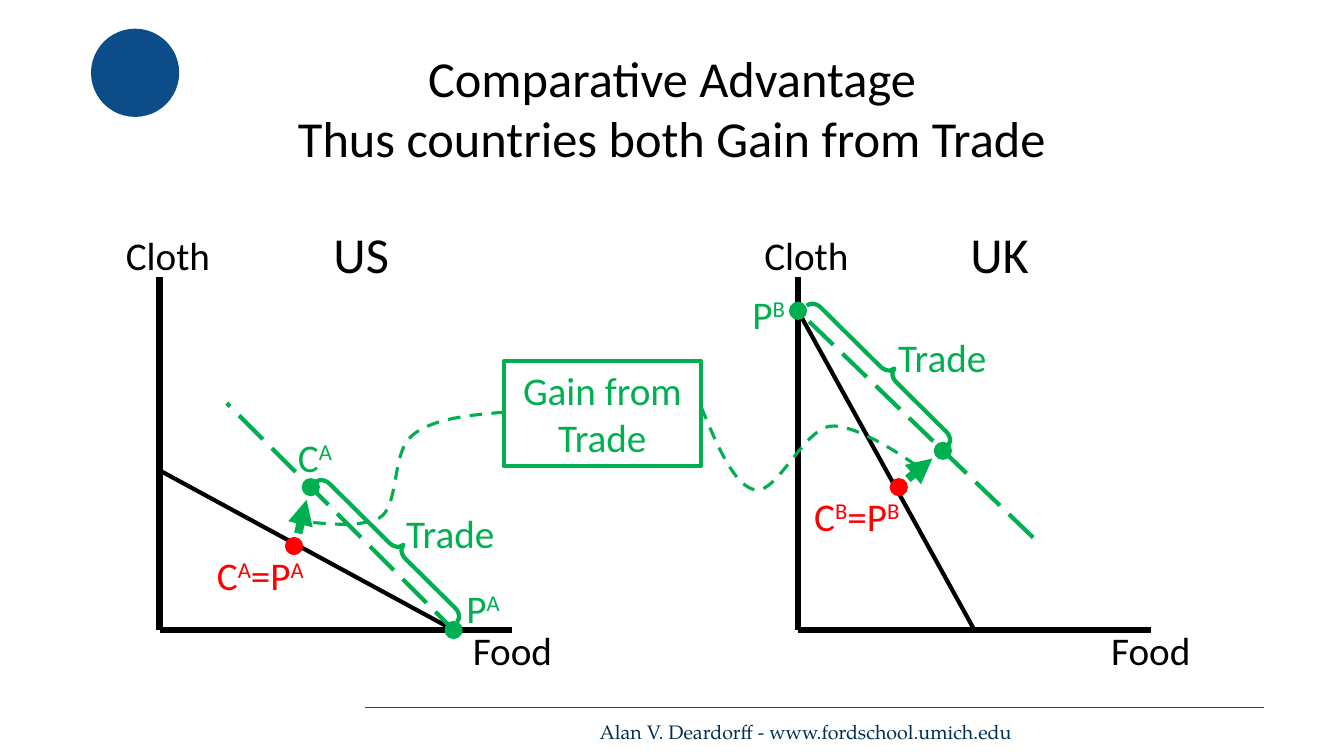
from lxml.etree import SubElement
from pptx import Presentation
from pptx.dml.color import RGBColor
from pptx.enum.dml import MSO_LINE as DASH
from pptx.enum.shapes import MSO_CONNECTOR as CONN, MSO_SHAPE as SHAPE
from pptx.enum.text import MSO_ANCHOR as ANCHOR, MSO_AUTO_SIZE as FIT, PP_ALIGN as ALIGN
from pptx.oxml.ns import qn
from pptx.util import Pt

BLACK = RGBColor(0x00, 0x00, 0x00)
RED = RGBColor(0xFF, 0x00, 0x00)
GREEN = RGBColor(0x00, 0xB0, 0x50)
BLUE = RGBColor(0x0C, 0x4C, 0x88)
NAVY = RGBColor(0x00, 0x2F, 0x52)


class Diagram:
    font = "Calibri"
    label_size = 28
    heading_size = 36
    dot_size = 12

    def __init__(self, slide):
        self.s = slide

    def stroke(self, shape, color, width, dash=None):
        shape.line.color.rgb = color
        shape.line.width = Pt(width)
        if dash:
            shape.line.dash_style = dash

    def set_text(self, tf, text, color, size=None, font=None, align=ALIGN.CENTER):
        for i, line in enumerate(text.split("\n")):
            p = tf.paragraphs[0] if i == 0 else tf.add_paragraph()
            p.alignment = align
            for j, part in enumerate(line.split("^")):
                if not part:
                    continue
                r = p.add_run()
                r.text = part
                if j % 2:
                    r._r.get_or_add_rPr().set("baseline", "30000")
            p.font.name = font or self.font
            p.font.size = Pt(size or self.label_size)
            p.font.color.rgb = color

    def text(self, x, y, w, h, text, color=BLACK, wrap=True, **style):
        tf = self.s.shapes.add_textbox(Pt(x), Pt(y), Pt(w), Pt(h)).text_frame
        tf.word_wrap = wrap
        tf.auto_size = FIT.SHAPE_TO_FIT_TEXT
        self.set_text(tf, text, color, **style)

    def label(self, x, y, text, color=BLACK, w=84):
        self.text(x, y, w, 41, text, color)

    def heading(self, x, y, w, h, text):
        self.text(x, y, w, h, text, size=self.heading_size)

    def line(self, start, end, color=BLACK, width=3, dash=None, arrow=False):
        c = self.s.shapes.add_connector(CONN.STRAIGHT, *map(Pt, start + end))
        self.stroke(c, color, width, dash)
        if arrow:
            SubElement(c.line._get_or_add_ln(), qn("a:tailEnd"), type="triangle")
        SubElement(c._element.spPr, qn("a:effectLst"))

    def shape(self, kind, x, y, w, h):
        sp = self.s.shapes.add_shape(kind, Pt(x), Pt(y), Pt(w), Pt(h))
        sp.shadow.inherit = False
        sp.fill.background()
        return sp

    def disc(self, center, size, color):
        x, y = center
        sp = self.shape(SHAPE.OVAL, x - size / 2, y - size / 2, size, size)
        sp.fill.solid()
        sp.fill.fore_color.rgb = color
        self.stroke(sp, color, 1)

    def dot(self, center, color):
        self.disc(center, self.dot_size, color)

    def brace(self, x, y):
        sp = self.shape(SHAPE.RIGHT_BRACE, x, y, 12.2, 142)
        sp.rotation = 314.7
        sp.adjustments[0] = 0.66
        sp.adjustments[1] = 0.535
        self.stroke(sp, GREEN, 3)

    def box(self, x, y, w, h, text):
        sp = self.shape(SHAPE.RECTANGLE, x, y, w, h)
        self.stroke(sp, GREEN, 3)
        sp.text_frame.word_wrap = True
        sp.text_frame.vertical_anchor = ANCHOR.TOP
        self.set_text(sp.text_frame, text, GREEN)

    def curve(self, points, steps=16):
        fb = self.s.shapes.build_freeform(*map(Pt, points[0]))
        vertices = []
        for i in range(0, len(points) - 1, 3):
            for k in range(1, steps + 1):
                t = k / steps
                weights = ((1 - t) ** 3, 3 * t * (1 - t) ** 2, 3 * t ** 2 * (1 - t), t ** 3)
                vertices.append(tuple(
                    Pt(sum(b * q[axis] for b, q in zip(weights, points[i:i + 4])))
                    for axis in (0, 1)))
        fb.add_line_segments(vertices, close=False)
        sp = fb.convert_to_shape()
        sp.shadow.inherit = False
        sp.fill.background()
        self.stroke(sp, GREEN, 2.25, DASH.DASH)

    def axes(self, x, country):
        self.line((x, 198), (x, 450), width=4.5)
        self.line((x + 252, 450), (x, 450), width=4.5)
        self.label(x + 210, 444, "Food")
        self.label(x - 36, 162, "Cloth")
        self.heading(x + 102, 156, 84, 51, country)

    def trade(self, frontier, price, autarky, production, consumption, gain, brace, label):
        self.line(*frontier)
        self.dot(autarky, RED)
        self.line(*price, GREEN, dash=DASH.LONG_DASH)
        self.dot(production, GREEN)
        self.dot(consumption, GREEN)
        self.brace(*brace)
        self.label(*label, "Trade", GREEN, w=96)
        self.line(*gain, GREEN, 6, arrow=True)


def main():
    prs = Presentation()
    prs.slide_width, prs.slide_height = Pt(960), Pt(540)
    d = Diagram(prs.slides.add_slide(prs.slide_layouts[6]))

    d.line((260.6, 505), (903, 505), BLUE, 0.5)
    d.text(417.6, 510.5, 312.5, 24.5, "Alan V. Deardorff - www.fordschool.umich.edu", NAVY,
           wrap=False, size=14, font="TeX Gyre Pagella", align=ALIGN.RIGHT)
    d.disc((96.5, 52), 62, BLUE)
    d.heading(54, 30, 852, 94, "Comparative Advantage\nThus countries both Gain from Trade")

    d.axes(114, "US")
    d.axes(570, "UK")
    d.trade(frontier=((324, 450), (114, 336)), price=((328, 454), (162, 288)),
            autarky=(210, 390), production=(324, 450), consumption=(222, 348),
            gain=((213, 381), (219, 357)), brace=(274.3, 319), label=(273.6, 360))
    d.trade(frontier=((696, 450), (570, 222)), price=((738, 384), (570, 222)),
            autarky=(642, 348), production=(570, 222), consumption=(673.5, 322),
            gain=((648.5, 342), (666, 327.5)), brace=(625, 193), label=(625, 234.7))

    d.label(144, 390, "C^A^=P^A", RED)
    d.label(324, 414, "P^A", GREEN, w=42)
    d.label(204, 306, "C^A", GREEN, w=42)
    d.label(570, 348, "C^B^=P^B", RED)
    d.label(528, 204, "P^B", GREEN, w=42)

    d.box(360, 258, 140.5, 75, "Gain from Trade")
    d.curve([(360, 294.5), (335, 296.5), (309, 299), (294.5, 311),
             (280, 323), (285, 358), (273, 368.5),
             (261.5, 378.5), (222, 373), (222, 373)])
    d.curve([(501, 291), (512.5, 319), (525, 348), (540, 350),
             (555, 352), (574, 307.5), (592.5, 304.5),
             (612, 301.5), (654.5, 332.5), (654.5, 332.5)])
    prs.save("out.pptx")


if __name__ == "__main__":
    main()
